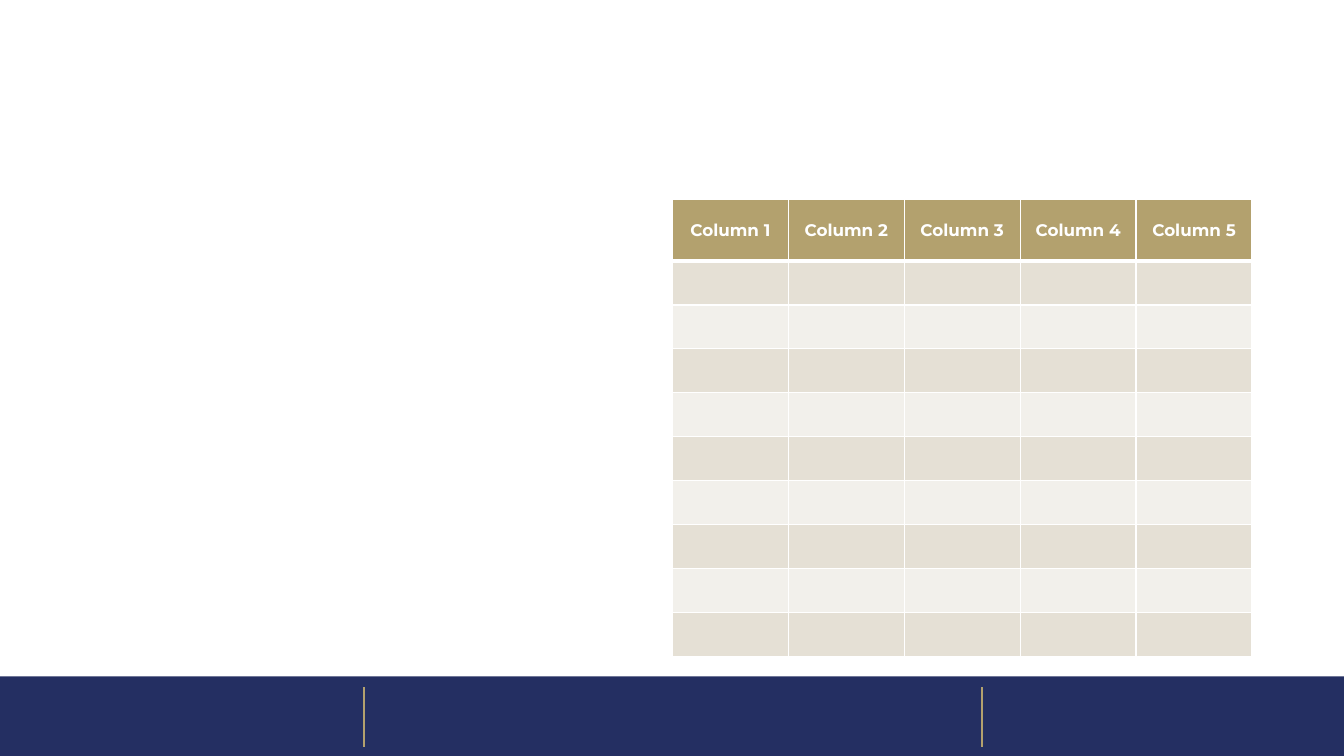
"""Build a slide with an empty five-column table above a navy footer bar."""
from lxml import etree
from pptx import Presentation
from pptx.dml.color import RGBColor
from pptx.enum import shapes, text
from pptx.oxml import ns
from pptx.util import Pt

HEADINGS = ["Column 1", "Column 2", "Column 3", "Column 4", "Column 5"]
BODY_ROWS = 9
DIVIDERS = [260, 701.3]

NAVY = RGBColor(0x24, 0x2F, 0x62)
GOLD = RGBColor(0xB3, 0xA1, 0x6E)
WHITE = RGBColor(0xFF, 0xFF, 0xFF)
BANDS = [RGBColor(0xE5, 0xE0, 0xD5), RGBColor(0xF2, 0xF0, 0xEB)]

PAGE_WIDTH, PAGE_HEIGHT = 960, 540
FOOTER_TOP = 483.1
DIVIDER_TOP, DIVIDER_BOTTOM = 491, 533.5
TABLE_LEFT, TABLE_TOP = 480.3, 142.6
COLUMN_WIDTH, HEADER_HEIGHT, ROW_HEIGHT = 82.8, 43.9, 31.36


def add_footer(page):
    bar = page.shapes.add_shape(
        shapes.MSO_SHAPE.RECTANGLE, 0, Pt(FOOTER_TOP),
        Pt(PAGE_WIDTH), Pt(PAGE_HEIGHT - FOOTER_TOP))
    bar.shadow.inherit = False
    bar.fill.solid()
    bar.fill.fore_color.rgb = NAVY
    bar.line.fill.background()
    for x in DIVIDERS:
        divider = page.shapes.add_connector(
            shapes.MSO_CONNECTOR.STRAIGHT,
            Pt(x), Pt(DIVIDER_TOP), Pt(x), Pt(DIVIDER_BOTTOM))
        divider.line.color.rgb = GOLD
        divider.line.width = Pt(1.5)
        etree.SubElement(divider.element.spPr, ns.qn("a:effectLst"))


def add_borders(cell, top, bottom):
    properties = cell._tc.get_or_add_tcPr()
    for side, width in {"L": 1, "R": 1, "T": top, "B": bottom}.items():
        border = etree.SubElement(
            properties, ns.qn(f"a:ln{side}"), w=str(Pt(width)))
        fill = etree.SubElement(border, ns.qn("a:solidFill"))
        etree.SubElement(fill, ns.qn("a:srgbClr"), val=str(WHITE))


def style_cell(cell, color, top, bottom):
    add_borders(cell, top, bottom)
    cell.fill.solid()
    cell.fill.fore_color.rgb = color
    cell.vertical_anchor = text.MSO_ANCHOR.MIDDLE
    para = cell.text_frame.paragraphs[0]
    para.alignment = text.PP_ALIGN.CENTER
    para.font.name = "Montserrat"
    para.font.size = Pt(12)


def add_grid(page):
    frame = page.shapes.add_table(
        BODY_ROWS + 1, len(HEADINGS), Pt(TABLE_LEFT), Pt(TABLE_TOP),
        Pt(COLUMN_WIDTH * len(HEADINGS)),
        Pt(HEADER_HEIGHT + ROW_HEIGHT * BODY_ROWS))
    table = frame.table
    for column in table.columns:
        column.width = Pt(COLUMN_WIDTH)
    for index, row in enumerate(table.rows):
        row.height = Pt(ROW_HEIGHT if index else HEADER_HEIGHT)
        color = BANDS[(index - 1) % 2] if index else GOLD
        for cell in row.cells:
            style_cell(cell, color, 3 if index == 1 else 1, 1 if index else 3)
    for cell, heading in zip(table.rows[0].cells, HEADINGS):
        para = cell.text_frame.paragraphs[0]
        para.text = heading
        para.font.bold = True
        para.font.color.rgb = WHITE


def main():
    deck = Presentation()
    deck.slide_width, deck.slide_height = Pt(PAGE_WIDTH), Pt(PAGE_HEIGHT)
    page = deck.slides.add_slide(deck.slide_layouts[6])
    add_footer(page)
    add_grid(page)
    deck.save("out.pptx")


if __name__ == "__main__":
    main()
